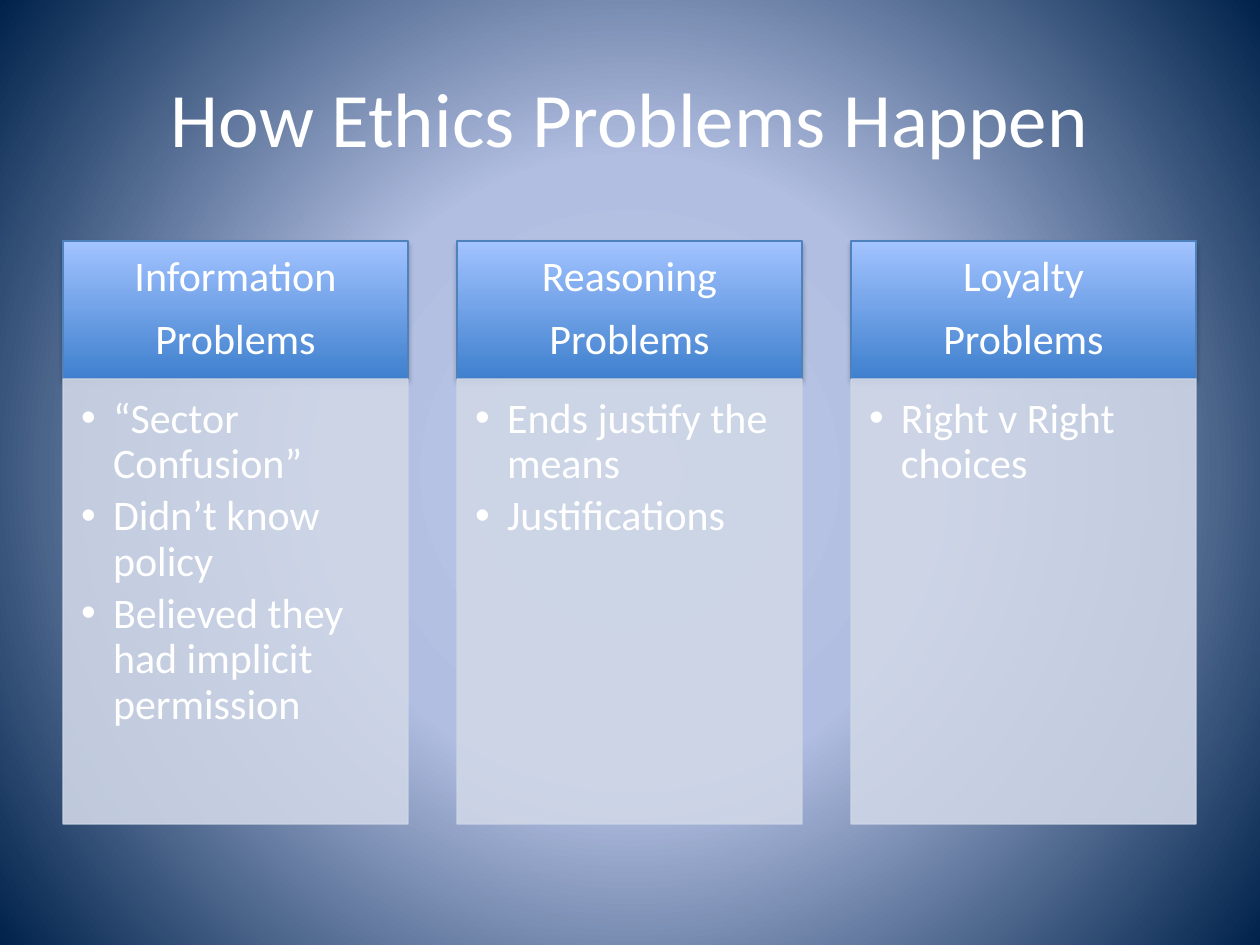
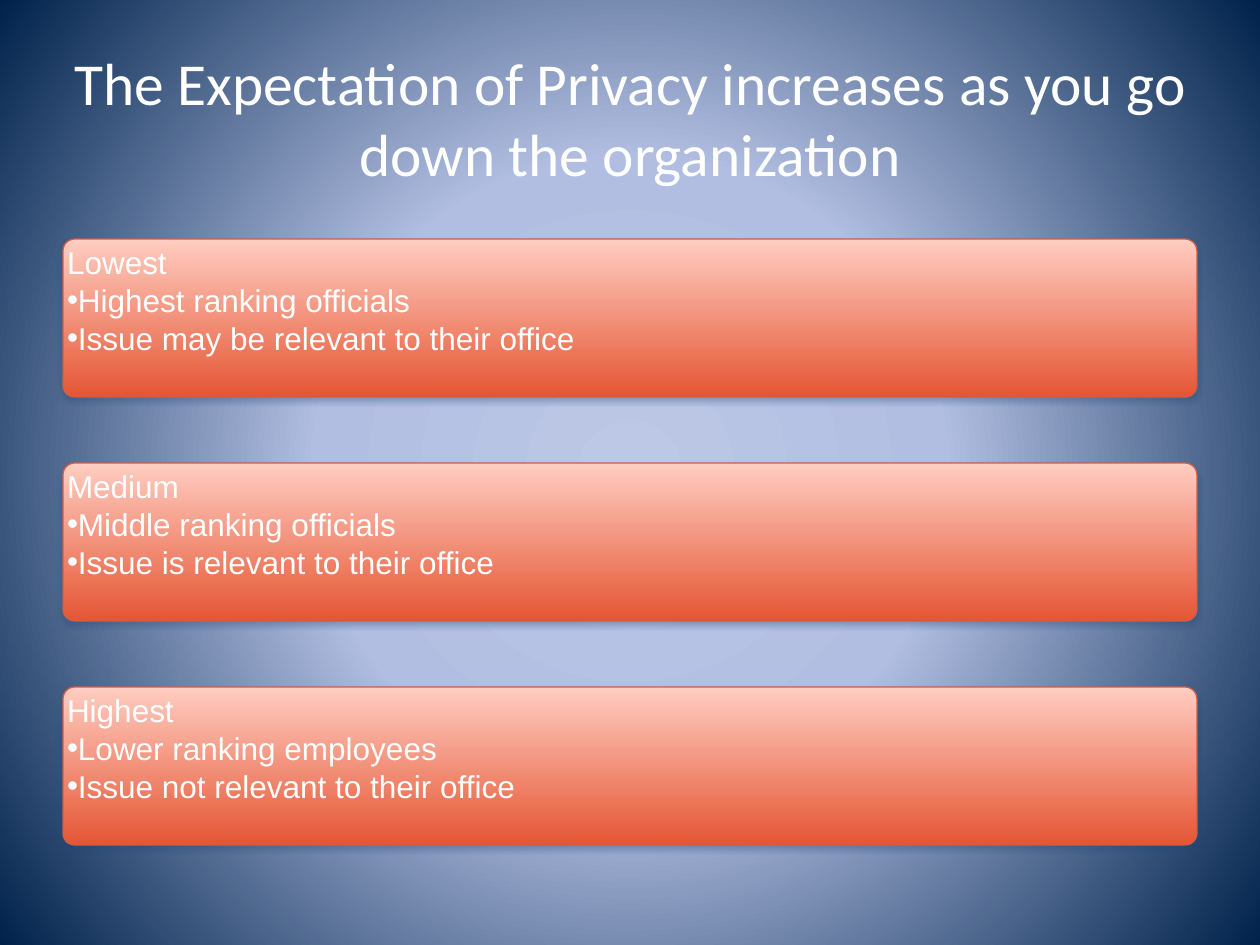
import pptx
import pptx.dml.color
import pptx.enum.shapes
import pptx.enum.text
import pptx.oxml
import pptx.oxml.ns
import pptx.util

PX = 914400 / 126
SHAPE = pptx.enum.shapes.MSO_SHAPE
ALIGN = pptx.enum.text.PP_ALIGN
ANCHOR = pptx.enum.text.MSO_ANCHOR
AUTO = pptx.enum.text.MSO_AUTO_SIZE
COLORS = {
    "white": "FFFFFF", "black": "000000", "navy": "1F497D",
    "glow": "BCC8E5", "mist": "B1BEE1", "edge": "00224B",
    "blue": "3F80CE", "sky": "A2C3FF", "blue_line": "4F81BD",
    "panel": "CFD7E7",
    "peach": "FFCDC1", "orange": "E55634", "orange_line": "CF5E43",
}
RADIAL = ('<a:path path="circle"><a:fillToRect l="50000" t="50000" '
          'r="50000" b="50000"/></a:path>')
MARGIN = 63
TOP = 239


def emu(px):
    return round(px * PX)


def rgb(name):
    return pptx.dml.color.RGBColor.from_string(COLORS[name])


def xml(tag, attrs="", inner=""):
    return pptx.oxml.parse_xml(
        f'<a:{tag} {pptx.oxml.ns.nsdecls("a")} {attrs}>{inner}</a:{tag}>')


def set_gradient(parent, stops, direction):
    gs = "".join(f'<a:gs pos="{pos * 1000}"><a:srgbClr val="{COLORS[name]}"/></a:gs>'
                 for pos, name in stops)
    solid = parent.find(pptx.oxml.ns.qn("a:solidFill"))
    parent.replace(solid, xml("gradFill", 'rotWithShape="1"',
                              f'<a:gsLst>{gs}</a:gsLst>{direction}'))


class Deck:
    def __init__(self):
        self.prs = pptx.Presentation()
        self.prs.slide_width = emu(1260)
        self.prs.slide_height = emu(945)
        self.slide = None
        master = self.prs.slide_master
        master.background.fill.solid()
        bg = next(master.element.iter(pptx.oxml.ns.qn("p:bgPr")))
        set_gradient(bg, [(0, "glow"), (40, "mist"), (100, "edge")], RADIAL)

    def new_slide(self, title, size):
        self.slide = self.prs.slides.add_slide(self.prs.slide_layouts[5])
        sp = self.slide.shapes.title
        sp.left, sp.top, sp.width, sp.height = map(emu, (MARGIN, 38, 1134, 158))
        self.set_text(sp.text_frame, [title], size, "Calibri", 6, ANCHOR.MIDDLE, AUTO.NONE)
        sp.text_frame.paragraphs[0].alignment = ALIGN.CENTER

    def set_text(self, tf, lines, size, font, inset, anchor, auto):
        tf.text = "\n".join(lines)
        tf.word_wrap = True
        tf.auto_size = auto
        tf.vertical_anchor = anchor
        tf.margin_left = tf.margin_right = emu(inset)
        tf.margin_top = tf.margin_bottom = emu(inset)
        for p in tf.paragraphs:
            for r in p.runs:
                r.font.size = pptx.util.Pt(size)
                r.font.name = font
                r.font.color.rgb = rgb("white")

    def shape(self, kind, x, y, w, h, fill, line):
        sp = self.slide.shapes.add_shape(kind, *map(emu, (x, y, w, h)))
        sp.fill.solid()
        sp.fill.fore_color.rgb = rgb(fill)
        sp.line.color.rgb = rgb(line)
        sp.line.width = pptx.util.Pt(0.75)
        sp.shadow.inherit = False
        return sp

    def raised(self, kind, x, y, w, h, stops, angle, line, shadow):
        sp = self.shape(kind, x, y, w, h, stops[0], line)
        spPr = sp.element.spPr
        set_gradient(spPr, zip((0, 100), stops),
                     f'<a:lin ang="{angle * 60000}" scaled="0"/>')
        spPr.find(pptx.oxml.ns.qn("a:effectLst")).append(xml(
            "outerShdw", 'blurRad="38100" dist="22860" dir="5400000" rotWithShape="0"',
            f'<a:srgbClr val="{COLORS[shadow]}"><a:alpha val="35000"/></a:srgbClr>'))
        return sp

    def panel(self, x, y, w, h):
        sp = self.shape(SHAPE.RECTANGLE, x, y, w, h, "panel", "panel")
        for color in sp.element.spPr.iter(pptx.oxml.ns.qn("a:srgbClr")):
            color.append(xml("alpha", 'val="90000"'))

    def text(self, x, y, w, h, lines, size, font, inset=0, anchor=ANCHOR.TOP):
        sp = self.slide.shapes.add_textbox(*map(emu, (x, y, w, h)))
        self.set_text(sp.text_frame, lines, size, font, inset, anchor,
                      AUTO.SHAPE_TO_FIT_TEXT)
        return sp.text_frame.paragraphs

    def spacing(self, paragraphs, before):
        for p in paragraphs:
            p.line_spacing = 0.9
            p.space_before = pptx.util.Pt(before)

    def bullets(self, paragraphs, indent=0):
        for p in paragraphs:
            pPr = p._p.get_or_add_pPr()
            pPr.set("marL", str(emu(indent)))
            pPr.set("indent", str(-emu(indent)))
            pPr.append(xml("buClr", inner=f'<a:srgbClr val="{COLORS["white"]}"/>'))
            pPr.append(xml("buFont", 'typeface="Arial"'))
            pPr.append(xml("buChar", 'char="•"'))

    def column(self, x, heading, items, text_height):
        w = 345
        self.raised(SHAPE.RECTANGLE, x, 241, w, 138, ("blue", "sky"), 270,
                    "blue_line", "black")
        ps = self.text(x, TOP, w, 141, [heading, "Problems"], 24, "Calibri", 14,
                       ANCHOR.MIDDLE)
        self.spacing(ps, 10)
        for p in ps:
            p.alignment = ALIGN.CENTER
        self.panel(x, 379, w, 445)
        ps = self.text(x, 379, w, text_height, items, 24, "Calibri", 18)
        self.spacing(ps, 4)
        for p in ps:
            p.level = 1
        self.bullets(ps, 32)

    def band(self, y, lines):
        sp = self.raised(SHAPE.ROUNDED_RECTANGLE, MARGIN, y, 1134, 158,
                         ("peach", "orange"), 90, "orange_line", "navy")
        sp.adjustments[0] = 0.075
        ps = self.text(MARGIN + 4, y + 4, 1127, 110, lines, 18, "Arial")
        self.bullets(ps[1:])


def main():
    deck = Deck()

    deck.new_slide("How Ethics Problems Happen", 44)
    columns = [
        ("Information", ["“Sector Confusion”", "Didn’t know policy",
                         "Believed they had implicit permission"], 438),
        ("Reasoning", ["Ends justify the means", "Justifications"], 185),
        ("Loyalty", ["Right v Right choices"], 132),
    ]
    for i, column in enumerate(columns):
        deck.column(MARGIN + 394 * i, *column)

    deck.new_slide("The Expectation of Privacy increases as you go down the organization", 34)
    bands = [
        ["Lowest", "Highest ranking officials", "Issue may be relevant to their office"],
        ["Medium", "Middle ranking officials", "Issue is relevant to their office"],
        ["Highest", "Lower ranking employees", "Issue not relevant to their office"],
    ]
    for i, lines in enumerate(bands):
        deck.band(TOP + 224 * i, lines)

    deck.prs.save("out.pptx")


if __name__ == "__main__":
    main()
